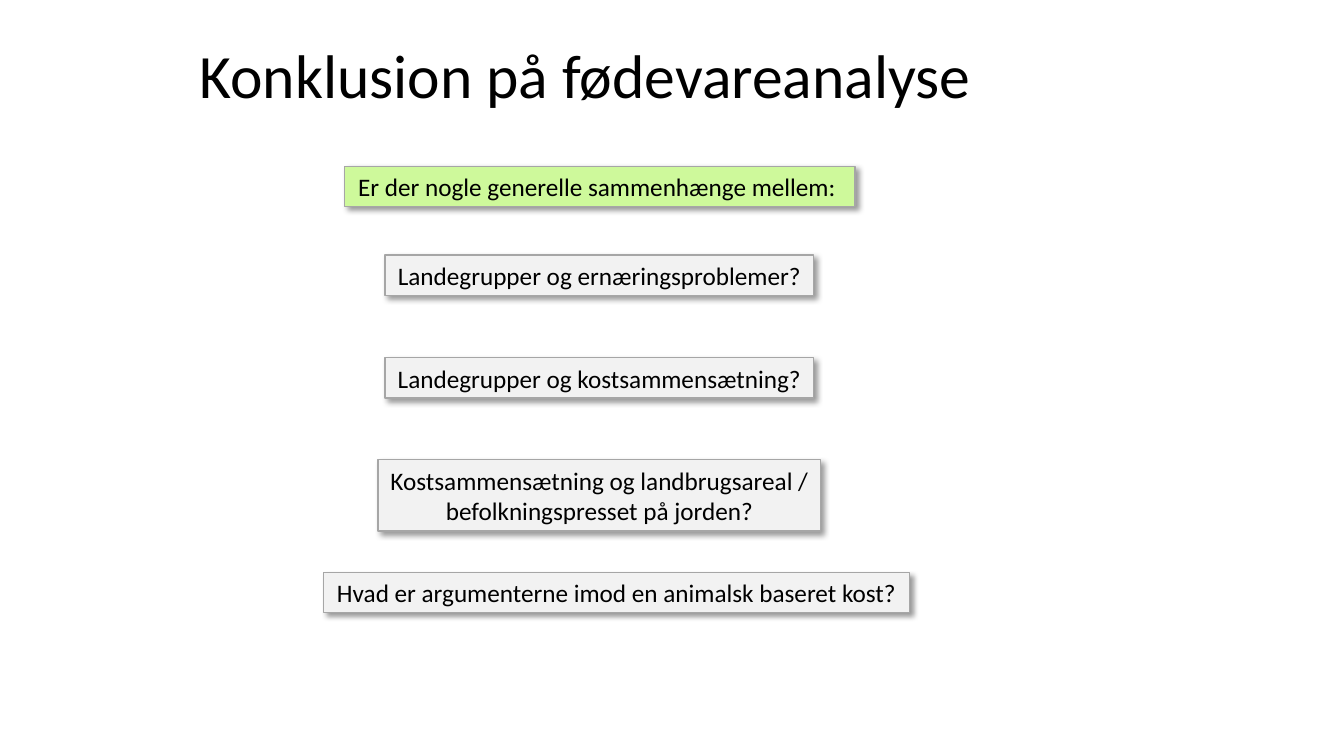
from lxml import etree
from pptx import Presentation
from pptx.dml.color import RGBColor
from pptx.enum.shapes import MSO_SHAPE
from pptx.enum.text import MSO_ANCHOR, MSO_AUTO_SIZE, PP_ALIGN
from pptx.oxml.ns import qn
from pptx.util import Inches, Pt

RECT = MSO_SHAPE.RECTANGLE
MIDDLE = MSO_ANCHOR.MIDDLE
GROW = MSO_AUTO_SIZE.SHAPE_TO_FIT_TEXT
CENTER = PP_ALIGN.CENTER
BLACK = RGBColor(0x00, 0x00, 0x00)
GREEN = RGBColor(0xCE, 0xF9, 0x9B)
LIGHT = RGBColor(0xF2, 0xF2, 0xF2)
GREY = RGBColor(0xA6, 0xA6, 0xA6)


def set_font(p, size):
    p.font.name = "Calibri"
    p.font.size = Pt(size)
    p.font.color.rgb = BLACK


def add_shadow(sp):
    sp.shadow.inherit = False
    effects = sp._element.spPr.find(qn("a:effectLst"))
    shadow = etree.SubElement(effects, qn("a:outerShdw"), blurRad=str(Pt(4)),
                              dist=str(Pt(3)), dir="2700000", algn="tl",
                              rotWithShape="0")
    color = etree.SubElement(shadow, qn("a:srgbClr"), val=str(BLACK))
    etree.SubElement(color, qn("a:alpha"), val="40000")


prs = Presentation()
prs.slide_width = Inches(13.33)
prs.slide_height = Inches(7.5)
s = prs.slides.add_slide(prs.slide_layouts[6])

title = s.shapes.add_textbox(Inches(1.88), Inches(0.05), Inches(9), Inches(1.45))
tf = title.text_frame
tf.word_wrap = True
tf.vertical_anchor = MIDDLE
p = tf.paragraphs[0]
p.text = "Konklusion på fødevareanalyse"
p.line_spacing = 0.9
set_font(p, 44)

boxes = [
    (3.42, 1.65, 5.06, 0.4, GREEN, "Er der nogle generelle sammenhænge mellem: "),
    (3.82, 2.53, 4.25, 0.4, LIGHT, "Landegrupper og ernæringsproblemer?"),
    (3.82, 3.55, 4.25, 0.4, LIGHT, "Landegrupper og kostsammensætning?"),
    (3.75, 4.56, 4.39, 0.71, LIGHT,
     "Kostsammensætning og landbrugsareal /\nbefolkningspresset på jorden?"),
    (3.21, 5.68, 5.81, 0.4, LIGHT,
     "Hvad er argumenterne imod en animalsk baseret kost?"),
]
for left, top, width, height, fill, text in boxes:
    sp = s.shapes.add_shape(RECT, Inches(left), Inches(top), Inches(width), Inches(height))
    sp.fill.solid()
    sp.fill.fore_color.rgb = fill
    sp.line.color.rgb = GREY
    sp.line.width = Pt(1)
    add_shadow(sp)
    tf = sp.text_frame
    tf.word_wrap = False
    tf.auto_size = GROW
    tf.vertical_anchor = MIDDLE
    p = tf.paragraphs[0]
    p.text = text
    p.alignment = CENTER
    set_font(p, 18)

prs.save("out.pptx")
